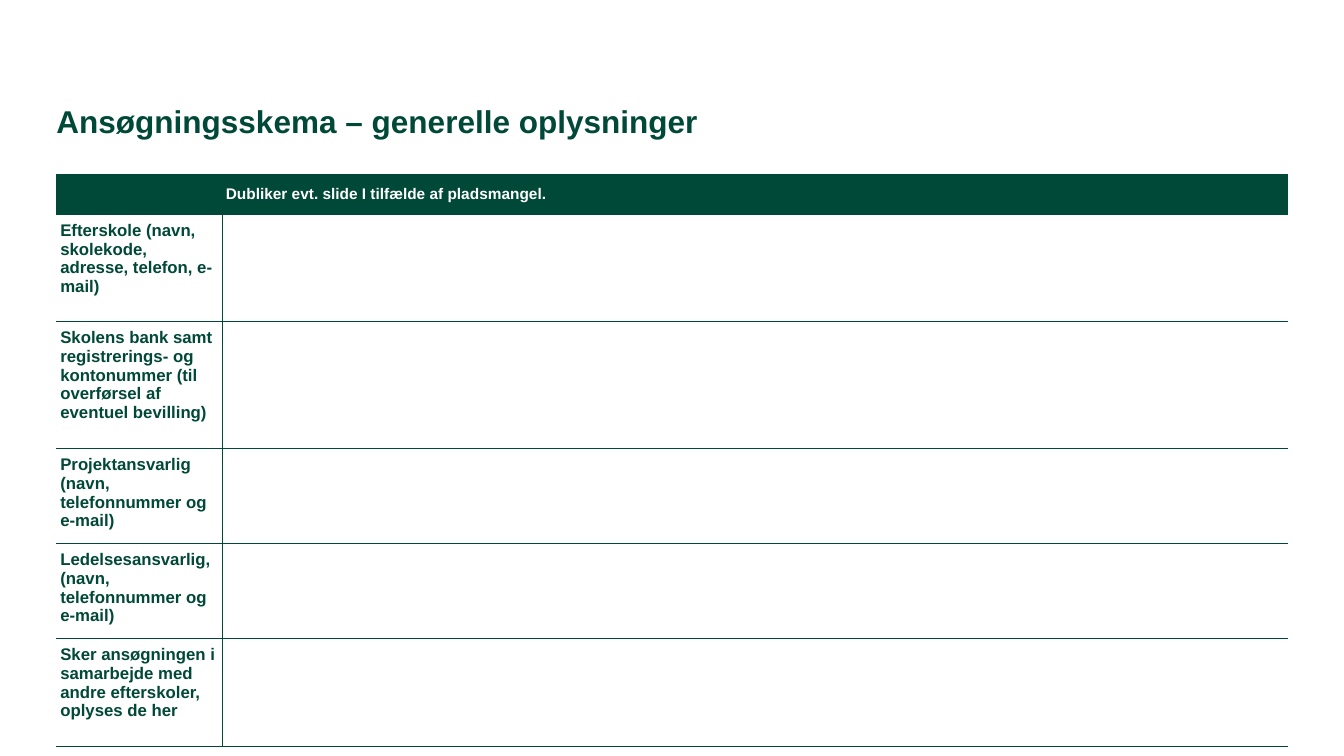
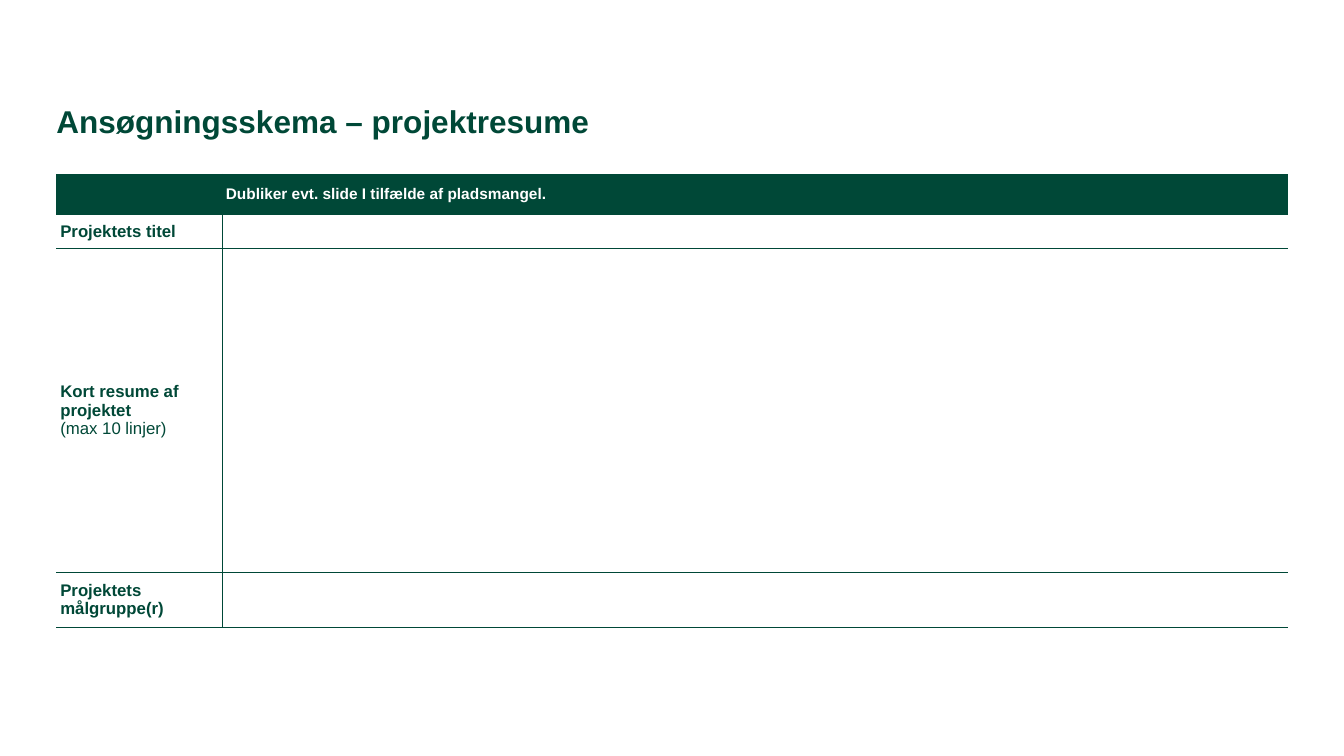
import pptx
import pptx.dml.color
import pptx.enum.text
import pptx.oxml
import pptx.oxml.ns
import pptx.util

Cm, Pt = pptx.util.Cm, pptx.util.Pt
ANCHOR = pptx.enum.text.MSO_ANCHOR

COLOURS = {"green": "004837", "white": "FFFFFF"}
FONT = "Arial"
LEFT, WIDTH = 1.42, 31.04
TITLE_TOP, TITLE_HEIGHT = 2.67, 1.73
FORM_TOP = 4.39
LABEL_WIDTH = 4.17
HEADER_HEIGHT = 1.0
HEADER_NOTE = "Dubliker evt. slide I tilfælde af pladsmangel."

GENERAL_ROWS = [
    (["Efterskole (navn, skolekode, adresse, telefon, e-mail)"], 2.7),
    (["Skolens bank samt registrerings- og kontonummer "
      "(til overførsel af eventuel bevilling)"], 3.2),
    (["Projektansvarlig (navn, telefonnummer og e-mail)"], 2.27),
    (["Ledelsesansvarlig, (navn, telefonnummer og e-mail)"], 2.27),
    (["Sker ansøgningen i samarbejde med andre efterskoler, "
      "oplyses de her"], 2.74),
]
SUMMARY_ROWS = [
    (["Projektets titel"], 0.86),
    (["Kort resume af projektet", "(max 10 linjer)"], 8.16),
    (["Projektets målgruppe(r)"], 1.31),
]


def rgb(name):
    """Return the named palette colour."""
    return pptx.dml.color.RGBColor.from_string(COLOURS[name])


def style(paragraph, size, colour, bold=True):
    """Set the font of a whole paragraph."""
    font = paragraph.font
    font.name, font.size, font.bold = FONT, Pt(size), bold
    font.color.rgb = rgb(colour)


def add_title(slide, text, left, top, width, height):
    """Place the slide title in the given box."""
    frame = slide.shapes.add_textbox(Cm(left), Cm(top), Cm(width), Cm(height)).text_frame
    frame.word_wrap = True
    frame.vertical_anchor = ANCHOR.TOP
    frame.margin_left = frame.margin_right = frame.margin_top = frame.margin_bottom = 0
    title = frame.paragraphs[0]
    title.text = text
    title.line_spacing = 0.9
    style(title, 22.5, "green")


def set_borders(cell, visible):
    """Draw thin green lines on the visible sides and none on the others."""
    properties = cell._tc.get_or_add_tcPr()
    for index, side in enumerate("LRTB"):
        paint = (f'<a:solidFill><a:srgbClr val="{COLOURS["green"]}"/></a:solidFill>'
                 if side in visible else "<a:noFill/>")
        properties.insert(index, pptx.oxml.parse_xml(
            f'<a:ln{side} {pptx.oxml.ns.nsdecls("a")} w="{Pt(0.5)}">{paint}</a:ln{side}>'))


def fill_cell(cell, lines, size, colour, anchor, margin):
    """Write lines in a cell, the first bold and the others regular."""
    cell.vertical_anchor = anchor
    cell.margin_left = cell.margin_right = Cm(0.1)
    cell.margin_top = cell.margin_bottom = Cm(margin)
    for index, line in enumerate(lines):
        frame = cell.text_frame
        paragraph = frame.add_paragraph() if index else frame.paragraphs[0]
        paragraph.text = line
        style(paragraph, size, colour, bold=index == 0)


def add_form(slide, rows, label_anchor, left, top, width):
    """Place a form table with a header band, labels and empty answer cells."""
    heights = [HEADER_HEIGHT] + [height for _, height in rows]
    form = slide.shapes.add_table(len(heights), 2, Cm(left), Cm(top),
                                  Cm(width), Cm(sum(heights))).table
    form.first_row = form.horz_banding = False
    form.columns[0].width = Cm(LABEL_WIDTH)
    form.columns[1].width = Cm(width - LABEL_WIDTH)
    for row, height in zip(form.rows, heights):
        row.height = Cm(height)
        for cell, sides in zip(row.cells, ("RTB", "LTB")):
            cell.fill.background()
            cell.margin_top = cell.margin_bottom = 0
            set_borders(cell, sides)
    for column in range(2):
        header = form.cell(0, column)
        header.fill.solid()
        header.fill.fore_color.rgb = rgb("green")
    fill_cell(form.cell(0, 1), [HEADER_NOTE], 11, "white", ANCHOR.MIDDLE, 0.2)
    for index, (label, _) in enumerate(rows, start=1):
        fill_cell(form.cell(index, 0), label, 12, "green", label_anchor, 0.18)


def add_form_slide(deck, title, rows, label_anchor):
    """Add one application form slide."""
    slide = deck.slides.add_slide(deck.slide_layouts[6])
    add_title(slide, title, LEFT, TITLE_TOP, WIDTH, TITLE_HEIGHT)
    add_form(slide, rows, label_anchor, LEFT, FORM_TOP, WIDTH)


def main():
    """Build and save the deck."""
    deck = pptx.Presentation()
    deck.slide_width, deck.slide_height = Cm(33.87), Cm(19.05)
    add_form_slide(deck, "Ansøgningsskema – generelle oplysninger", GENERAL_ROWS, ANCHOR.TOP)
    add_form_slide(deck, "Ansøgningsskema – projektresume", SUMMARY_ROWS, ANCHOR.MIDDLE)
    deck.save("out.pptx")


if __name__ == "__main__":
    main()
